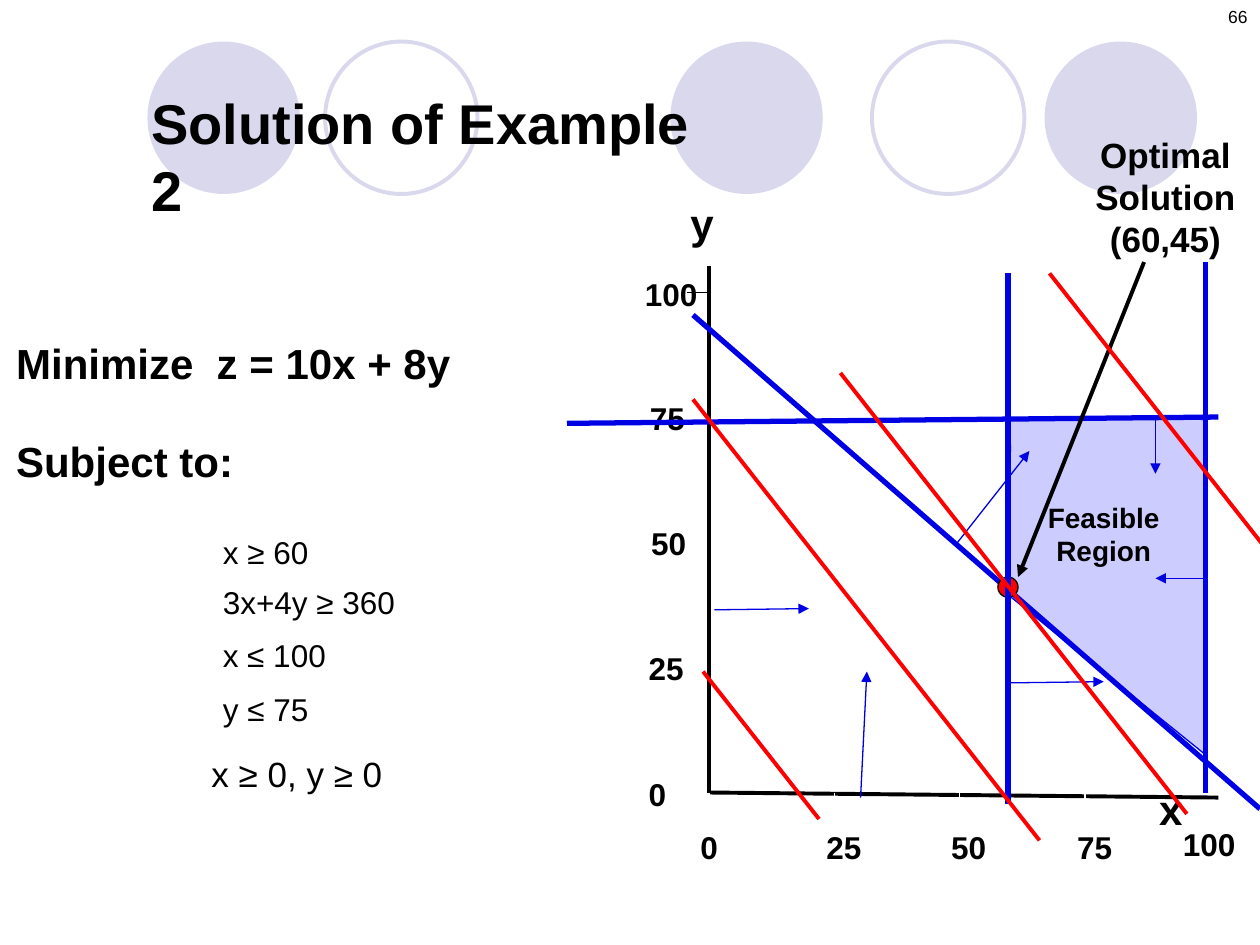
from lxml import etree
from pptx import Presentation
from pptx.dml.color import RGBColor
from pptx.enum.shapes import MSO_CONNECTOR, MSO_SHAPE
from pptx.enum.text import MSO_ANCHOR, MSO_AUTO_SIZE, PP_ALIGN
from pptx.oxml.ns import qn
from pptx.util import Pt

OVAL, STRAIGHT = MSO_SHAPE.OVAL, MSO_CONNECTOR.STRAIGHT
LEFT, MID, RIGHT = PP_ALIGN.LEFT, PP_ALIGN.CENTER, PP_ALIGN.RIGHT
TOP, FIXED = MSO_ANCHOR.TOP, MSO_AUTO_SIZE.NONE

PX = 9144  # 100 px to the inch
THEME = {
    "font": "Arial",
    "ink": "000000", "paper": "FFFFFF", "bound": "0000E4", "cost": "FF0000",
    "region": "CCCCFF", "circle": "D9D8EC",
    "title": 32, "head": 24, "note": 20, "label": 18, "area": 16, "page": 10,
    "thin": 0.75, "mid": 2.25, "wide": 3,
}

TITLE = ("Solution of Example 2", (110, 65, 484, 63))
DISCS, RINGS, DISC = (532, 829, 117), (692, 258), (33, 121)
REGION = [(800, 333), (802, 354), (801, 400), (800, 472), (906, 558),
          (958, 600), (958, 333), (880, 331)]
MARKER = (792, 458, 16, 16)

# text, box, size, bold
LINES = [
    ("Minimize  z = 10x + 8y", (3, 263, 368, 50), "head", True),
    ("Subject to:", (3, 341, 220, 50), "head", True),
    ("x ≥ 60", (167, 418, 89, 40), "label", False),
    ("3x+4y ≥ 360", (167, 458, 158, 40), "label", False),
    ("x ≤ 100", (167, 500, 103, 40), "label", False),
    ("y ≤ 75", (167, 543, 89, 40), "label", False),
    ("x ≥ 0, y ≥ 0", (158, 592, 208, 44), "note", False),
    ("x", (910, 617, 39, 50), "head", True),
    ("y", (538, 152, 39, 50), "head", True),
]
# text, box, size, bold, alignment
NOTES = [
    ("Feasible Region", (793, 392, 166, 64), "area", True, MID),
    ("Optimal Solution\n(60,45)", (850, 101, 150, 111), "note", True, MID),
    ("66", (767, 0, 233, 50), "page", False, RIGHT),
]
# label, left, top
X_MARKS = [("0", 546, 652), ("25", 646, 652), ("50", 745, 652),
           ("75", 845, 652), ("100", 929, 650)]
Y_MARKS = [("0", 505, 610), ("25", 505, 510), ("50", 507, 411),
           ("75", 506, 312), ("100", 502, 213)]
MARK_W = {1: 34, 2: 48, 3: 62}

ORIGIN, STEP = (563, 629), 99.4
AXES = [(563, 629, 967, 633), (563, 211, 563, 629)]
BOUNDS = [(450, 336, 967, 331), (550, 250, 1000, 642), (957, 208, 957, 629)]
X_BOUND = (800, 217, 800, 638)
SIDES = [(917, 333, 917, 376), (955, 459, 917, 459), (758, 433, 817, 358),
         (800, 542, 876, 541), (567, 484, 642, 483), (683, 633, 688, 533)]
POINTER = (908, 208, 808, 458)
COSTS = [(550, 317), (667, 296), (833, 217)]
COST_RUN = (275, 350)
LOW_COST = (558, 533, 650, 650)


def px(*nums):
    return [round(n * PX) for n in nums]


def color(name):
    return RGBColor.from_string(THEME[name])


def paint(shape, fill=None, line=None, width="thin"):
    shape.shadow.inherit = False
    if fill:
        shape.fill.solid()
        shape.fill.fore_color.rgb = color(fill)
    else:
        shape.fill.background()
    if line:
        shape.line.color.rgb = color(line)
        shape.line.width = Pt(THEME[width])
    else:
        shape.line.fill.background()


def write(shape, text, size, bold, align=LEFT, wrap=True):
    frame = shape.text_frame
    frame.text = text
    form = {"word_wrap": wrap, "auto_size": FIXED, "vertical_anchor": TOP}
    for key, val in form.items():
        setattr(frame, key, val)
    font = {"name": THEME["font"], "size": Pt(THEME[size]), "bold": bold}
    for para in frame.paragraphs:
        para.alignment = align
        for run in para.runs:
            for key, val in font.items():
                setattr(run.font, key, val)
            run.font.color.rgb = color("ink")


def draw(shapes, ends, ink, width, arrow=False):
    line = shapes.add_connector(STRAIGHT, *px(*ends))
    line.line.color.rgb = color(ink)
    line.line.width = Pt(THEME[width])
    if arrow:
        tail = etree.SubElement(line.line._get_or_add_ln(), qn("a:tailEnd"))
        tail.set("type", "triangle")
    etree.SubElement(line._element.spPr, qn("a:effectLst"))


def add_back(shapes):
    """Circles and feasible region, with the title moved in front of them."""
    top, size = DISC
    for left in DISCS:
        paint(shapes.add_shape(OVAL, *px(left, top, size, size)), "circle")
    for left in RINGS:
        ring = shapes.add_shape(OVAL, *px(left, top, size, size))
        paint(ring, line="circle", width="mid")
    path = shapes.build_freeform(*REGION[0], scale=PX)
    path.add_line_segments(REGION[1:], close=True)
    paint(path.convert_to_shape(), "region", "bound")

    title = shapes.title
    text, box = TITLE
    title.left, title.top, title.width, title.height = px(*box)
    write(title, text, "title", True)
    shapes._spTree.append(title._element)


def add_text(shapes):
    marks = [(text, (left, top, MARK_W[len(text)], 40), "label", True)
             for text, left, top in X_MARKS + Y_MARKS]
    for text, box, size, bold in LINES + marks:
        write(shapes.add_textbox(*px(*box)), text, size, bold, wrap=False)
    for text, box, size, bold, align in NOTES:
        write(shapes.add_textbox(*px(*box)), text, size, bold, align)


def add_graph(shapes):
    x, y = ORIGIN
    for ends in AXES:
        draw(shapes, ends, "ink", "mid")
    for i in range(4):
        draw(shapes, (x + i * STEP, y, x + i * STEP, y + 17), "paper", "thin")
    for i in range(5):
        tick = y - 1 - i * 99
        ink = "ink" if i == 4 else "paper"
        draw(shapes, (545, tick, 561, tick), ink, "thin")
    for ends in BOUNDS:
        draw(shapes, ends, "bound", "wide")
    paint(shapes.add_shape(OVAL, *px(*MARKER)), "cost", "ink")
    draw(shapes, POINTER, "ink", "mid", True)
    draw(shapes, X_BOUND, "bound", "wide")
    for ends in SIDES:
        draw(shapes, ends, "bound", "thin", True)
    run, drop = COST_RUN
    costs = [(x, y, x + run, y + drop) for x, y in COSTS]
    for ends in [LOW_COST] + costs:
        draw(shapes, ends, "cost", "mid")


def main():
    deck = Presentation()
    deck.slide_width, deck.slide_height = px(1000, 750)
    shapes = deck.slides.add_slide(deck.slide_layouts[5]).shapes
    add_back(shapes)
    add_text(shapes)
    add_graph(shapes)
    deck.save("out.pptx")


if __name__ == "__main__":
    main()
